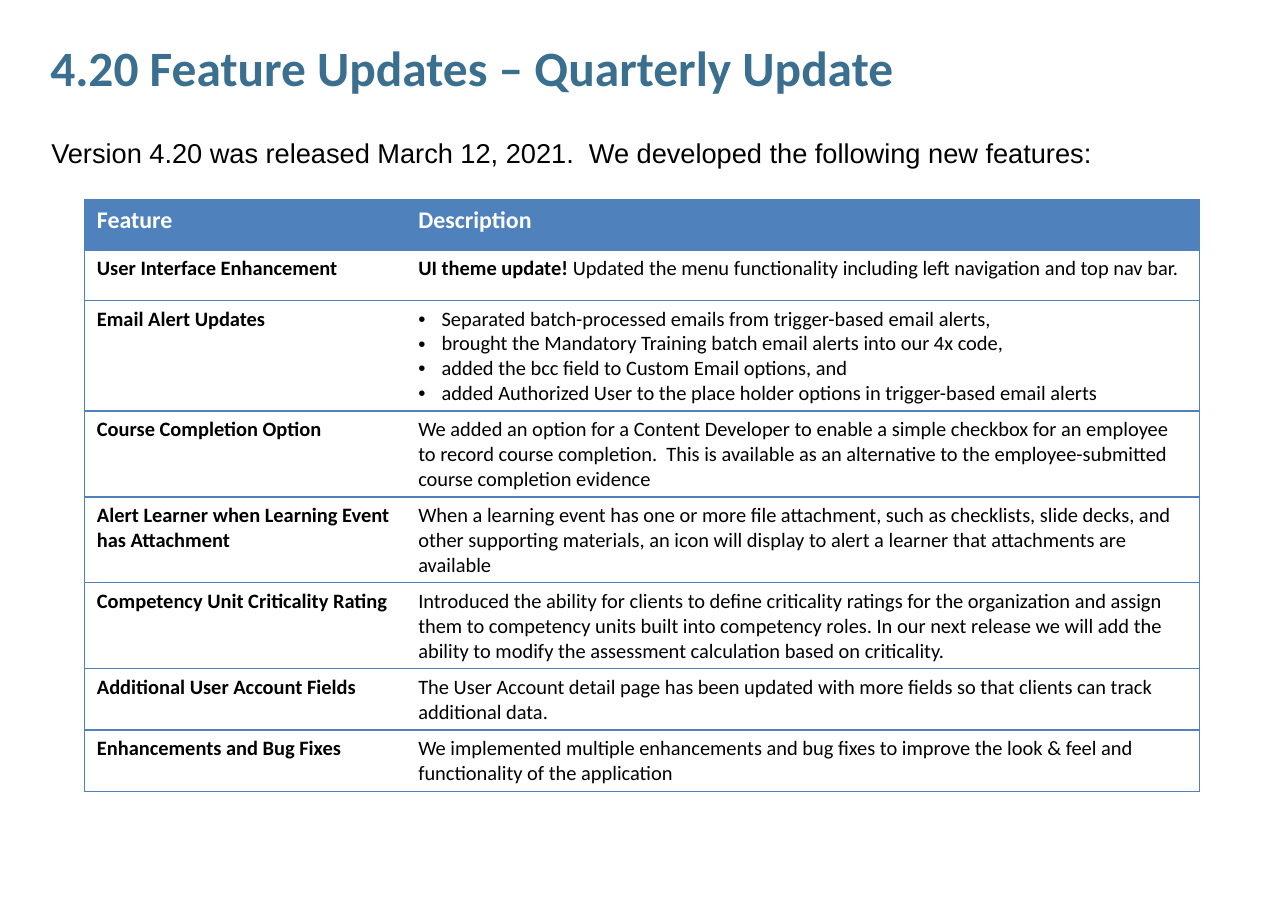
from lxml.etree import SubElement, fromstring
from pptx import Presentation
from pptx.dml.color import RGBColor
from pptx.enum.text import MSO_ANCHOR, MSO_AUTO_SIZE, PP_ALIGN
from pptx.oxml.ns import nsdecls, qn
from pptx.util import Pt

PX = 9144  # 100 px to the inch
TEAL = RGBColor(0x3A, 0x6F, 0x8F)
BLUE = RGBColor(0x4F, 0x81, 0xBD)
BLACK = RGBColor(0, 0, 0)
WHITE = RGBColor(255, 255, 255)
ROW_H = 41
BULLET_INDENT = 19

# Each description is a list of paragraphs; a "**" ends a bold lead-in.
ROWS = [
    ("Feature", ["Description"]),
    ("User Interface Enhancement",
     ["UI theme update!** Updated the menu functionality including left navigation and top nav bar."]),
    ("Email Alert Updates",
     ["Separated batch-processed emails from trigger-based email alerts,",
      "brought the Mandatory Training batch email alerts into our 4x code,",
      "added the bcc field to Custom Email options, and",
      "added Authorized User to the place holder options in trigger-based email alerts"]),
    ("Course Completion Option",
     ["We added an option for a Content Developer to enable a simple checkbox for an employee "
      "to record course completion.  This is available as an alternative to the "
      "employee-submitted course completion evidence"]),
    ("Alert Learner when Learning Event has Attachment",
     ["When a learning event has one or more file attachment, such as checklists, slide decks, "
      "and other supporting materials, an icon will display to alert a learner that attachments "
      "are available"]),
    ("Competency Unit Criticality Rating",
     ["Introduced the ability for clients to define criticality ratings for the organization and "
      "assign them to competency units built into competency roles. In our next release we will "
      "add the ability to modify the assessment calculation based on criticality."]),
    ("Additional User Account Fields",
     ["The User Account detail page has been updated with more fields so that clients can track "
      "additional data."]),
    ("Enhancements and Bug Fixes",
     ["We implemented multiple enhancements and bug fixes to improve the look & feel and "
      "functionality of the application"]),
]


def add_run(p, text, size, color, bold=False, name="Calibri"):
    r = p.add_run()
    r.text = text
    for key, value in {"name": name, "size": Pt(size), "bold": bold}.items():
        setattr(r.font, key, value)
    r.font.color.rgb = color


def set_borders(cell, sides):
    """Draw blue lines on the given sides (of L, R, T, B) and clear the others."""
    tcPr = cell._tc.get_or_add_tcPr()
    for i, side in enumerate("LRTB"):
        paint = (f'<a:solidFill><a:srgbClr val="{BLUE}"/></a:solidFill>'
                 if side in sides else "<a:noFill/>")
        tcPr.insert(i, fromstring(
            f'<a:ln{side} {nsdecls("a")} w="{Pt(1)}">{paint}</a:ln{side}>'))


prs = Presentation()
prs.slide_width, prs.slide_height = 1050 * PX, 750 * PX
s = prs.slides.add_slide(prs.slide_layouts[5])

title = s.shapes.title
for key, value in {"left": 31, "top": 17, "width": 985, "height": 74}.items():
    setattr(title, key, value * PX)
tf = title.text_frame
tf.vertical_anchor = MSO_ANCHOR.MIDDLE
tf.auto_size = MSO_AUTO_SIZE.NONE
p = tf.paragraphs[0]
p.alignment = PP_ALIGN.LEFT
add_run(p, "4.20 Feature Updates – Quarterly Update", 29, TEAL, True)

intro = s.shapes.add_textbox(32 * PX, 106 * PX, 984 * PX, 37 * PX)
tf = intro.text_frame
tf.word_wrap = True
tf.auto_size = MSO_AUTO_SIZE.SHAPE_TO_FIT_TEXT
p = tf.paragraphs[0]
p.space_after = Pt(6)
add_run(p, "Version 4.20 was released March 12, 2021.  We developed the following new features:",
        16, BLACK, name="Arial")

table = s.shapes.add_table(len(ROWS), 2, 69 * PX, 163 * PX, 909 * PX,
                           ROW_H * len(ROWS) * PX).table
table.horz_banding = False
table.columns[0].width, table.columns[1].width = 262 * PX, 647 * PX

for i, (feature, description) in enumerate(ROWS):
    header = i == 0
    size, color = (14, WHITE) if header else (12, BLACK)
    table.rows[i].height = ROW_H * PX
    for j, (lines, sides) in enumerate((([feature], "LTB"), (description, "RTB"))):
        cell = table.cell(i, j)
        cell.fill.solid()
        cell.fill.fore_color.rgb = BLUE if header else WHITE
        set_borders(cell, sides)
        tf = cell.text_frame
        for k, line in enumerate(lines):
            p = tf.add_paragraph() if k else tf.paragraphs[0]
            if len(lines) > 1:
                pPr = p._p.get_or_add_pPr()
                pPr.set("marL", str(BULLET_INDENT * PX))
                pPr.set("indent", str(-BULLET_INDENT * PX))
                SubElement(pPr, qn("a:buFont"), typeface="Arial")
                SubElement(pPr, qn("a:buChar"), char="•")
            lead, mark, rest = line.partition("**")
            add_run(p, lead, size, color, header or j == 0 or bool(mark))
            if rest:
                add_run(p, rest, size, color)

prs.save("out.pptx")
